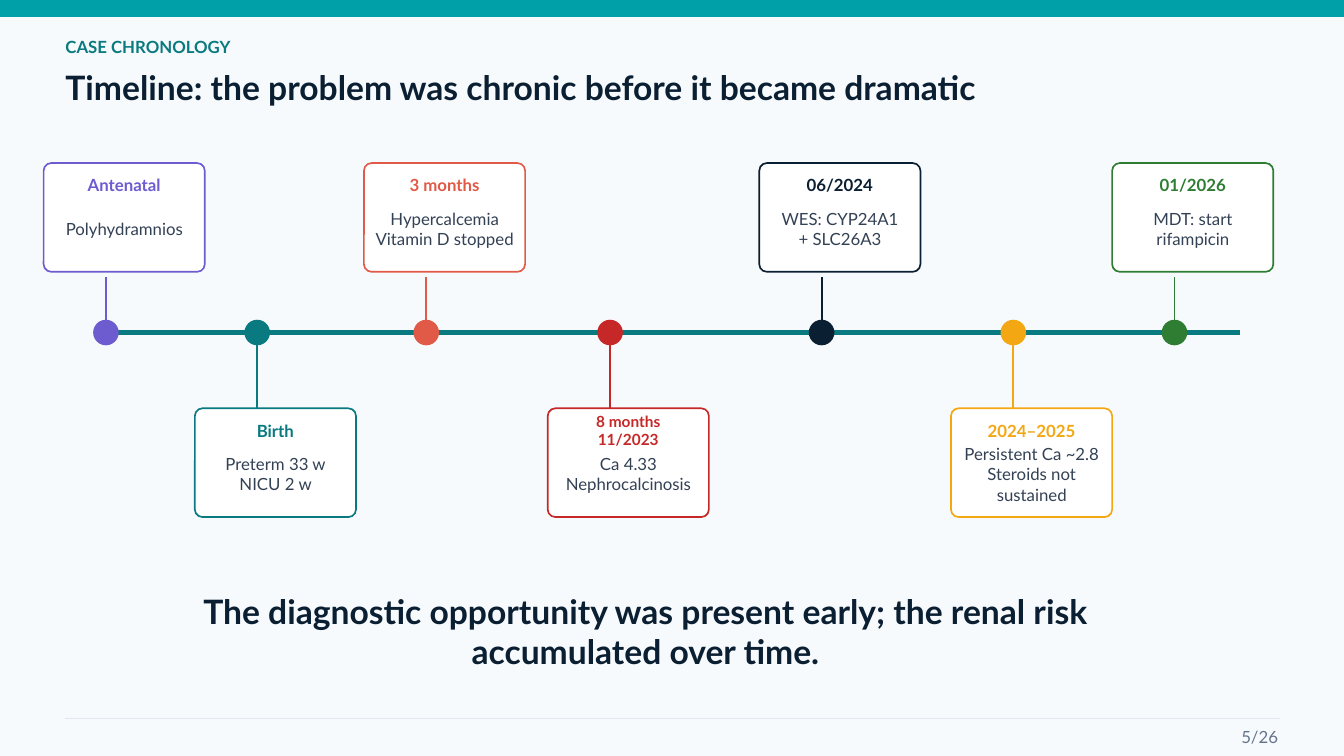
from lxml.etree import SubElement
from pptx import Presentation
from pptx.dml.color import RGBColor
from pptx.enum.shapes import MSO_CONNECTOR, MSO_SHAPE
from pptx.enum.text import MSO_ANCHOR, PP_ALIGN
from pptx.oxml.ns import qn
from pptx.util import Cm, Pt

NAVY = RGBColor(0x0B, 0x1F, 0x33)
TEAL = RGBColor(0x08, 0x7A, 0x80)
BRIGHT_TEAL = RGBColor(0x00, 0xA0, 0xA8)
PURPLE = RGBColor(0x6D, 0x5B, 0xD0)
CORAL = RGBColor(0xE0, 0x5A, 0x47)
RED = RGBColor(0xC6, 0x28, 0x28)
AMBER = RGBColor(0xF3, 0xA7, 0x12)
GREEN = RGBColor(0x2E, 0x7D, 0x32)
SLATE = RGBColor(0x33, 0x41, 0x55)
GREY = RGBColor(0x64, 0x74, 0x8B)
RULE = RGBColor(0xE2, 0xE8, 0xF0)
WHITE = RGBColor(0xFF, 0xFF, 0xFF)
PAGE = RGBColor(0xF7, 0xFA, 0xFC)

SECTION = "CASE CHRONOLOGY"
TITLE = "Timeline: the problem was chronic before it became dramatic"
MESSAGE = ("The diagnostic opportunity was present early; "
           "the renal risk accumulated over time.")
PAGE_NUMBER = "5/26"

# centre on the axis (cm), colour, date lines, event lines
EVENTS = [
    (2.67, PURPLE, ["Antenatal"], ["Polyhydramnios"]),
    (6.48, TEAL, ["Birth"], ["Preterm 33 w", "NICU 2 w"]),
    (10.74, CORAL, ["3 months"], ["Hypercalcemia", "Vitamin D stopped"]),
    (15.37, RED, ["8 months", "11/2023"], ["Ca 4.33", "Nephrocalcinosis"]),
    (20.7, NAVY, ["06/2024"], ["WES: CYP24A1", "+ SLC26A3"]),
    (25.53, AMBER, ["2024–2025"], ["Persistent Ca ~2.8", "Steroids not sustained"]),
    (29.59, GREEN, ["01/2026"], ["MDT: start", "rifampicin"]),
]

SLIDE_W, SLIDE_H = 33.86, 19.05
AXIS_Y = 8.38
DOT = 0.61
CARD_W, CARD_H = 4.06, 2.74
CARD_SHIFT = 1.57  # card's left edge to the event's centre
UPPER_TOP, LOWER_TOP = 4.11, 10.29
UPPER_STEM_TOP = 6.99


def add_text(s, lines, x, y, w, h, size=12, color=NAVY, bold=False,
             align=PP_ALIGN.LEFT):
    tf = s.shapes.add_textbox(Cm(x), Cm(y), Cm(w), Cm(h)).text_frame
    tf.word_wrap = True
    tf.vertical_anchor = MSO_ANCHOR.MIDDLE
    tf.margin_left = tf.margin_right = tf.margin_top = tf.margin_bottom = 0
    for i, line in enumerate(lines):
        p = tf.add_paragraph() if i else tf.paragraphs[0]
        p.alignment = align
        r = p.add_run()
        r.text = line
        r.font.name, r.font.size, r.font.bold = "Lato", Pt(size), bold
        r.font.color.rgb = color


def add_shape(s, kind, x, y, w, h, fill, line=None, width=1):
    sp = s.shapes.add_shape(kind, Cm(x), Cm(y), Cm(w), Cm(h))
    sp.shadow.inherit = False
    sp.fill.solid()
    sp.fill.fore_color.rgb = fill
    if line is None:
        sp.line.fill.background()
    else:
        sp.line.color.rgb = line
        sp.line.width = Pt(width)
    return sp


def add_line(s, x1, y1, x2, y2, color, width):
    cn = s.shapes.add_connector(MSO_CONNECTOR.STRAIGHT,
                                Cm(x1), Cm(y1), Cm(x2), Cm(y2))
    cn.line.color.rgb = color
    cn.line.width = Pt(width)
    SubElement(cn._element.spPr, qn("a:effectLst"))


def add_event(s, x, color, date, event, upper):
    """Dot on the axis, stem and card; upper puts the card above the axis."""
    add_shape(s, MSO_SHAPE.OVAL, x - DOT / 2, AXIS_Y - DOT / 2, DOT, DOT,
              color, color)
    top = UPPER_TOP if upper else LOWER_TOP
    stem = (UPPER_STEM_TOP, AXIS_Y) if upper else (AXIS_Y, LOWER_TOP)
    add_line(s, x, stem[0], x, stem[1], color, 1.4)
    left = x - CARD_SHIFT
    card = add_shape(s, MSO_SHAPE.ROUNDED_RECTANGLE, left, top, CARD_W, CARD_H,
                     WHITE, color, 1.2)
    card.adjustments[0] = 0.07
    add_text(s, date, left + 0.25, top + 0.33, 3.56, 0.46,
             size=12 if len(date) == 1 else 11, color=color, bold=True,
             align=PP_ALIGN.CENTER)
    add_text(s, event, left + 0.23, top + 1.09, 3.61, 1.14, color=SLATE,
             align=PP_ALIGN.CENTER)


def main():
    prs = Presentation()
    prs.slide_width, prs.slide_height = Cm(SLIDE_W), Cm(SLIDE_H)
    s = prs.slides.add_slide(prs.slide_layouts[6])
    s.background.fill.solid()
    s.background.fill.fore_color.rgb = PAGE

    add_shape(s, MSO_SHAPE.RECTANGLE, 0, 0, SLIDE_W, 0.43, BRIGHT_TEAL)
    add_text(s, [SECTION], 1.65, 0.86, 6.6, 0.64, color=TEAL, bold=True)
    add_text(s, [TITLE], 1.65, 1.45, 27.43, 1.47, size=24, bold=True)
    add_line(s, 1.65, 18.11, 32.26, 18.11, RULE, 1)
    add_text(s, [PAGE_NUMBER], 30.68, 18.34, 1.52, 0.46, color=GREY,
             align=PP_ALIGN.RIGHT)

    add_line(s, 2.41, AXIS_Y, 31.24, AXIS_Y, TEAL, 3)
    for i, event in enumerate(EVENTS):
        add_event(s, *event, upper=i % 2 == 0)

    add_text(s, [MESSAGE], 2.67, 15.42, 27.18, 0.97, size=24, bold=True,
             align=PP_ALIGN.CENTER)
    prs.save("out.pptx")


if __name__ == "__main__":
    main()
